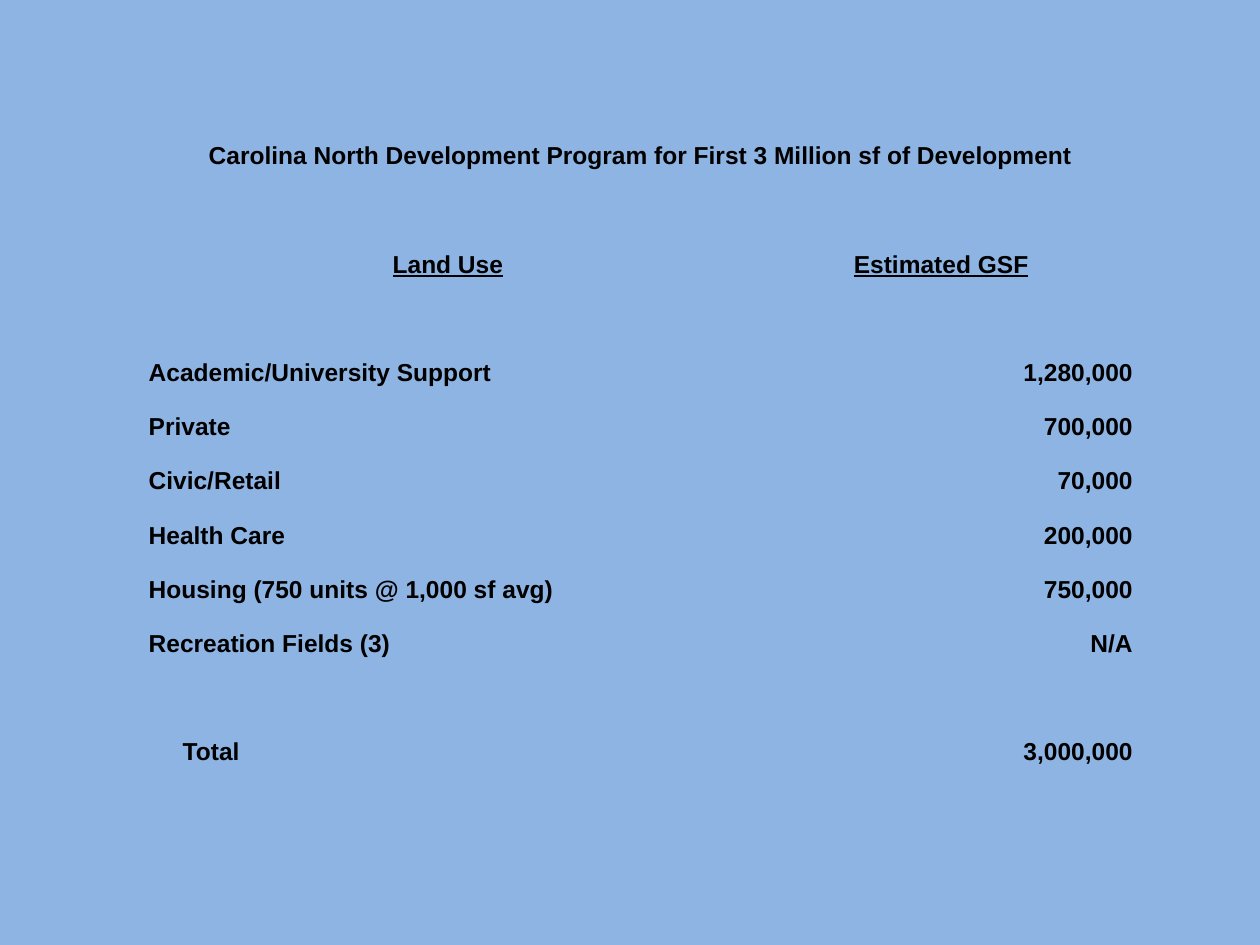
from pptx import Presentation
from pptx.dml.color import RGBColor
from pptx.enum.text import MSO_ANCHOR as Anchor, PP_ALIGN as Align
from pptx.util import Inches, Pt

NO_GRID = "{2D5ABB26-0587-4C30-8999-92F81FD0307C}"
TITLE = "Carolina North Development Program for First 3 Million sf of Development"
HEADS = ("Land Use", "Estimated GSF")
USES = [
    ("Academic/University Support", "1,280,000"),
    ("Private", "700,000"),
    ("Civic/Retail", "70,000"),
    ("Health Care", "200,000"),
    ("Housing (750 units @ 1,000 sf avg)", "750,000"),
    ("Recreation Fields (3)", "N/A"),
]
TOTAL = ("Total", "3,000,000")
GAP = ("", "")


def color(code):
    return RGBColor.from_string(code)


class Sheet:
    font = {"name": "Arial", "size": Pt(14), "bold": True}
    frame = {
        "margin_left": Inches(0.01),
        "margin_right": Inches(0.01),
        "margin_top": Inches(0.01),
        "margin_bottom": 0,
        "vertical_anchor": Anchor.BOTTOM,
    }
    ink = "000000"

    def __init__(self, slide):
        self.slide = slide

    def back(self, code):
        fill = self.slide.background.fill
        fill.solid()
        fill.fore_color.rgb = color(code)

    def cell(self, cell, text, align, line=False):
        cell.fill.background()
        for key, value in self.frame.items():
            setattr(cell, key, value)
        para = cell.text_frame.paragraphs[0]
        para.text = text
        para.alignment = align
        for key, value in {**self.font, "underline": line}.items():
            setattr(para.font, key, value)
        para.font.color.rgb = color(self.ink)

    def table(self, rows, left, top, widths, height):
        """Add a plain table without bands, fills or grid."""
        box = self.slide.shapes.add_table(
            len(rows), len(widths), Inches(left), Inches(top),
            Inches(sum(widths)), Inches(height * len(rows)))
        table = box.table
        table.first_row = table.horz_banding = False
        style = table._tbl.tblPr.find("{*}tableStyleId")
        style.text = NO_GRID
        for col, width in zip(table.columns, widths):
            col.width = Inches(width)
        for r, row in enumerate(rows):
            table.rows[r].height = Inches(height)
            head = row == HEADS or row[0] == TITLE
            aligns = (Align.CENTER,) * 2 if head else (Align.LEFT, Align.RIGHT)
            for c, text in enumerate(row):
                self.cell(table.cell(r, c), text, aligns[c], row == HEADS)
        return table


def main():
    deck = Presentation()
    deck.slide_width, deck.slide_height = Inches(10), Inches(7.5)
    sheet = Sheet(deck.slides.add_slide(deck.slide_layouts[6]))
    sheet.back("8EB4E3")
    rows = [(TITLE, ""), GAP, HEADS, GAP, *USES, GAP, TOTAL]
    table = sheet.table(rows, 1.17, 0.92, (4.77, 3.06), 0.43)
    table.cell(0, 0).merge(table.cell(0, 1))
    table.cell(len(rows) - 1, 0).margin_left = Inches(0.28)
    deck.save("out.pptx")


if __name__ == "__main__":
    main()
